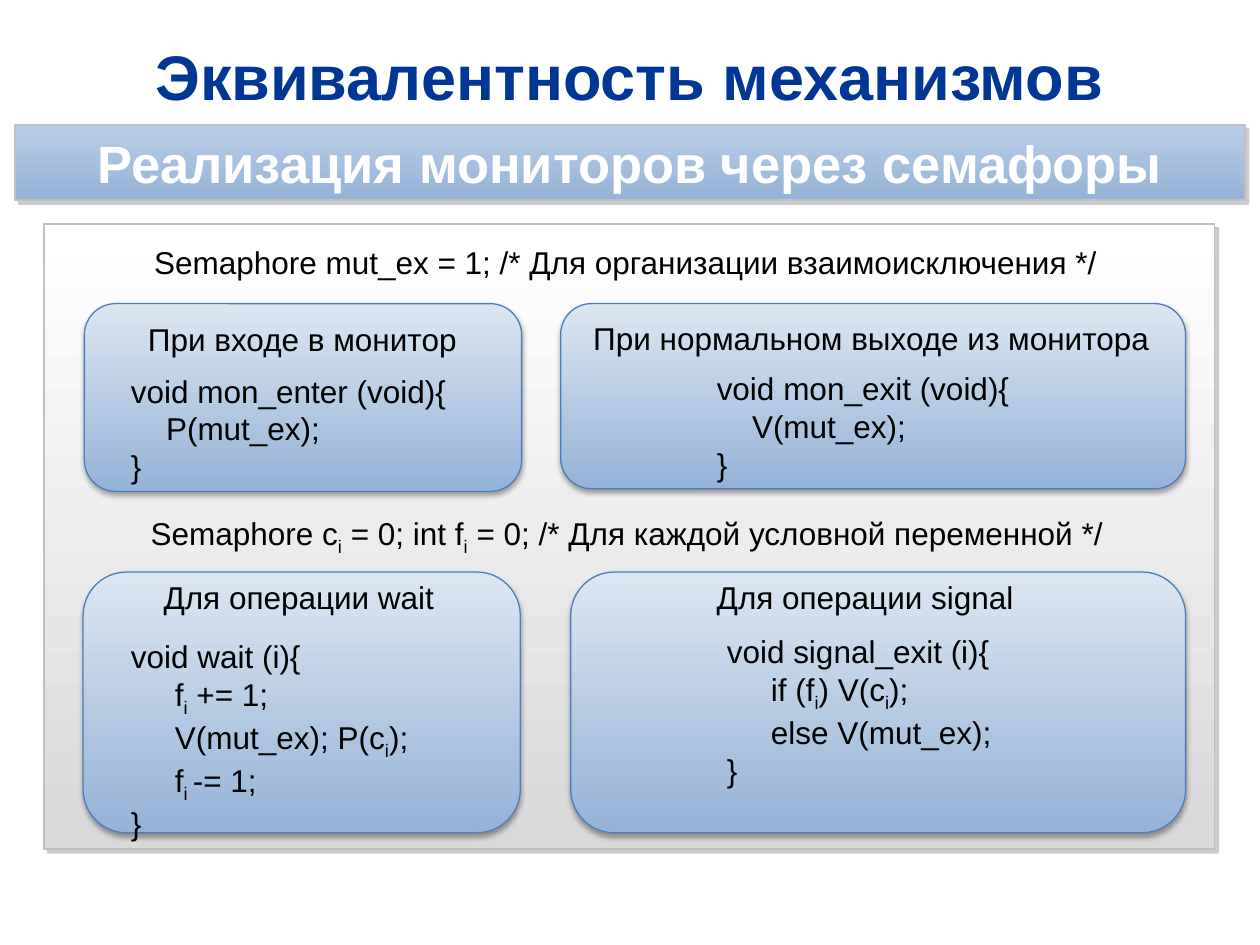
from lxml import etree
from pptx import Presentation
from pptx.dml.color import RGBColor
from pptx.enum.shapes import MSO_SHAPE
from pptx.enum.text import MSO_ANCHOR, PP_ALIGN
from pptx.oxml.ns import qn
from pptx.util import Pt

PX = 9144
FONT = "Arial"
RECTANGLE = MSO_SHAPE.RECTANGLE
ROUNDED = MSO_SHAPE.ROUNDED_RECTANGLE
LEFT = PP_ALIGN.LEFT
CENTER = PP_ALIGN.CENTER
TOP = MSO_ANCHOR.TOP
MIDDLE = MSO_ANCHOR.MIDDLE

WHITE = RGBColor(0xFF, 0xFF, 0xFF)
BLACK = RGBColor(0x00, 0x00, 0x00)
NAVY = RGBColor(0x00, 0x37, 0x94)
SILVER = RGBColor(0xC0, 0xC0, 0xC0)
LIGHT_GRAY = RGBColor(0xD9, 0xD9, 0xD9)
GRAY = RGBColor(0x80, 0x80, 0x80)
PALE_BLUE = RGBColor(0xDC, 0xE6, 0xF2)
SOFT_BLUE = RGBColor(0xB9, 0xCD, 0xE5)
MID_BLUE = RGBColor(0x95, 0xB3, 0xD7)
EDGE_BLUE = RGBColor(0x4B, 0x7E, 0xBC)

HARD_SHADOW = (GRAY, 40, 0, 3, 45)
SOFT_SHADOW = (BLACK, 35, 3.1, 1.8, 90)


class SlideBuilder:
    def __init__(self, slide):
        self.slide = slide

    def panel(self, kind, box, colors, edge, width, shadow):
        shape = self.slide.shapes.add_shape(kind, *(n * PX for n in box))
        shape.fill.gradient()
        shape.fill.gradient_angle = 270
        for stop, color, position in zip(shape.fill.gradient_stops, colors, (0, 1)):
            stop.color.rgb = color
            stop.position = position
        shape.line.color.rgb = edge
        shape.line.width = Pt(width)
        self.shadow(shape, *shadow)
        return shape

    def shadow(self, shape, color, opacity, blur, distance, angle):
        shape.shadow.inherit = False
        effects = shape._element.spPr.find(qn("a:effectLst"))
        outer = etree.SubElement(effects, qn("a:outerShdw"), blurRad=str(Pt(blur)),
                                 dist=str(Pt(distance)), dir=str(angle * 60000),
                                 algn="ctr", rotWithShape="0")
        shade = etree.SubElement(outer, qn("a:srgbClr"), val=str(color))
        etree.SubElement(shade, qn("a:alpha"), val=str(opacity * 1000))

    def card(self, box):
        self.panel(ROUNDED, box, (PALE_BLUE, MID_BLUE), EDGE_BLUE, 0.75, SOFT_SHADOW)

    def text(self, box, lines, **style):
        shape = self.slide.shapes.add_textbox(*(n * PX for n in box))
        self.fill_text(shape, lines, **style)

    def fill_text(self, shape, lines, size=18, color=BLACK, bold=False, align=LEFT,
                  anchor=TOP, spacing=None, indent=0):
        frame = shape.text_frame
        frame.word_wrap = True
        frame.vertical_anchor = anchor
        for index, line in enumerate(lines):
            paragraph = frame.add_paragraph() if index else frame.paragraphs[0]
            paragraph.alignment = align
            paragraph.line_spacing = spacing
            if indent and 0 < index < len(lines) - 1:
                paragraph._p.get_or_add_pPr().set("marL", str(indent * PX))
            font = paragraph.font
            font.name, font.size, font.bold = FONT, Pt(size), bold
            font.color.rgb = color
            self.runs(paragraph, line)

    def runs(self, paragraph, line):
        for index, part in enumerate(line.split("~")):
            run = paragraph.add_run()
            run.text = part
            if index % 2:
                run._r.get_or_add_rPr().set("baseline", "-25000")


def main():
    presentation = Presentation()
    presentation.slide_width = 1000 * PX
    presentation.slide_height = 750 * PX
    builder = SlideBuilder(presentation.slides.add_slide(presentation.slide_layouts[6]))

    builder.panel(RECTANGLE, (35, 178, 929, 496), (WHITE, LIGHT_GRAY), SILVER, 1, HARD_SHADOW)
    for box in ((453, 454, 488, 207), (66, 454, 347, 207),
                (445, 241, 496, 147), (67, 241, 347, 149)):
        builder.card(box)

    builder.text((35, 26, 929, 68), ["Эквивалентность механизмов"],
                 size=36, color=NAVY, bold=True, align=CENTER, anchor=MIDDLE)
    banner = builder.panel(RECTANGLE, (12, 99, 976, 60), (SOFT_BLUE, MID_BLUE),
                           SILVER, 1, HARD_SHADOW)
    builder.fill_text(banner, ["Реализация мониторов через семафоры"],
                      size=30, color=WHITE, bold=True, align=CENTER, anchor=MIDDLE)

    builder.text((16, 194, 961, 34),
                 ["Semaphore mut_ex = 1; /* Для организации взаимоисключения */"],
                 align=CENTER, spacing=0.8)
    builder.text((106, 249, 268, 40), ["При входе в монитор"], align=CENTER)
    builder.text((461, 254, 465, 34), ["При нормальном выходе из монитора"], spacing=0.8)
    builder.text((94, 290, 307, 100),
                 ["void mon_enter (void){", "P(mut_ex);", "}"], indent=28)
    builder.text((559, 288, 288, 100),
                 ["void mon_exit (void){", "V(mut_ex);", "}"], indent=28)

    builder.text((27, 406, 941, 34),
                 ["Semaphore c~i~ = 0; int f~i~ = 0; /* Для каждой условной переменной */"],
                 align=CENTER, spacing=0.8)
    builder.text((120, 454, 240, 40), ["Для операции wait"])
    builder.text((94, 501, 319, 160),
                 ["void wait (i){", "f~i~ += 1;", "V(mut_ex); P(c~i~);", "f~i ~-= 1;", "}"],
                 indent=35)
    builder.text((559, 454, 350, 40), ["Для операции signal"])
    builder.text((567, 497, 283, 130),
                 ["void signal_exit (i){", "if (f~i~) V(c~i~);", "else V(mut_ex);", "}"],
                 indent=35)

    presentation.save("out.pptx")


if __name__ == "__main__":
    main()
